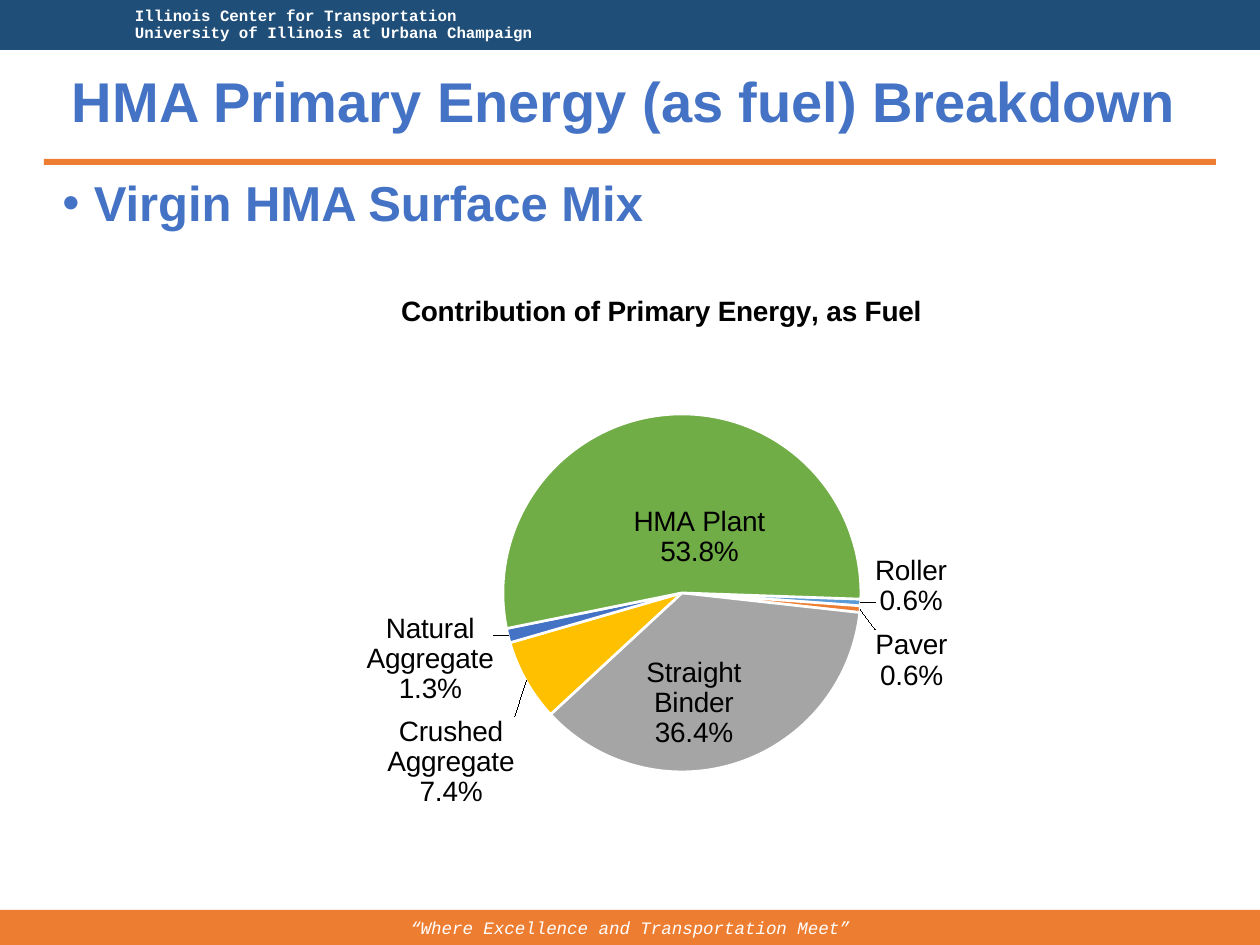
from pptx import Presentation
from pptx.chart.data import CategoryChartData
from pptx.dml.color import RGBColor
from pptx.enum.chart import XL_CHART_TYPE, XL_LABEL_POSITION
from pptx.enum.shapes import MSO_SHAPE
from pptx.enum.text import MSO_ANCHOR, MSO_AUTO_SIZE, PP_ALIGN
from pptx.oxml import parse_xml
from pptx.oxml.ns import nsdecls
from pptx.util import Pt

RECT = MSO_SHAPE.RECTANGLE
PIE = XL_CHART_TYPE.PIE
CENTER, OUTSIDE = XL_LABEL_POSITION.CENTER, XL_LABEL_POSITION.OUTSIDE_END
MIDDLE, TOP = MSO_ANCHOR.MIDDLE, MSO_ANCHOR.TOP
LEFT, MID = PP_ALIGN.LEFT, PP_ALIGN.CENTER

WHITE = RGBColor(0xFF, 0xFF, 0xFF)
BLACK = RGBColor(0, 0, 0)
NAVY = RGBColor(0x1F, 0x4E, 0x79)
ORANGE = RGBColor(0xED, 0x7D, 0x31)
BLUE = RGBColor(0x44, 0x72, 0xC4)
SKY = RGBColor(0x5B, 0x9B, 0xD5)
GRAY = RGBColor(0xA5, 0xA5, 0xA5)
GOLD = RGBColor(0xFF, 0xC0, 0x00)
GREEN = RGBColor(0x70, 0xAD, 0x47)

SCALE = 914400 / 126
CHART_W, CHART_H = 935, 621


def px(*lengths):
    return [round(n * SCALE) for n in lengths]


def write(tf, lines, fmt, align=LEFT, spacing=0.9):
    tf.word_wrap = True
    tf.auto_size = MSO_AUTO_SIZE.NONE
    for i, line in enumerate(lines):
        p = tf.paragraphs[0] if i == 0 else tf.add_paragraph()
        p.alignment = align
        p.line_spacing = spacing
        r = p.add_run()
        r.text = line
        r.font.color.rgb = fmt["color"]
        for key in ("name", "size", "bold", "italic"):
            setattr(r.font, key, fmt.get(key))


prs = Presentation()
prs.slide_width, prs.slide_height = px(1260, 945)
s = prs.slides.add_slide(prs.slide_layouts[5])

bars = []
for box, color in (
    ((0, 910, 1260, 36), ORANGE),
    ((0, 0, 1260, 50), NAVY),
    ((44, 159, 1172, 6), ORANGE),
):
    sp = s.shapes.add_shape(RECT, *px(*box))
    sp.shadow.inherit = False
    sp.fill.solid()
    sp.fill.fore_color.rgb = color
    sp.line.fill.background()
    sp.text_frame.vertical_anchor = MIDDLE
    bars.append(sp)
footer, header, rule = bars

write(footer.text_frame, ["“Where Excellence and Transportation Meet”"],
      {"name": "Courier New", "size": Pt(10), "italic": True, "color": WHITE}, MID, 1.0)
header.text_frame.margin_left = px(135)[0]
write(header.text_frame,
      ["Illinois Center for Transportation", "University of Illinois at Urbana Champaign"],
      {"name": "Courier New", "size": Pt(9), "bold": True, "color": WHITE})

title = s.shapes.title
title.left, title.top, title.width, title.height = px(50, 54, 1148, 101)
title.text_frame.vertical_anchor = MIDDLE
write(title.text_frame, ["HMA Primary Energy (as fuel) Breakdown"],
      {"name": "Arial", "size": Pt(32), "bold": True, "color": BLUE}, MID)

body = s.shapes.add_textbox(*px(50, 173, 1148, 71))
body.text_frame.vertical_anchor = TOP
write(body.text_frame, ["Virgin HMA Surface Mix"],
      {"name": "Arial", "size": Pt(28), "bold": True, "color": BLUE})
pPr = body.text_frame.paragraphs[0]._p.get_or_add_pPr()
pPr.set("marL", "228600")
pPr.set("indent", "-228600")
pPr.append(parse_xml(f'<a:buFont {nsdecls("a")} typeface="Arial"/>'))
pPr.append(parse_xml(f'<a:buChar {nsdecls("a")} char="•"/>'))

slices = [
    ("Roller", 0.6, SKY, OUTSIDE, 7, -17),
    ("Paver", 0.6, ORANGE, OUTSIDE, 8, 20),
    ("Straight Binder", 36.4, GRAY, CENTER, -16, 25),
    ("Crushed Aggregate", 7.4, GOLD, OUTSIDE, -5, 32),
    ("Natural Aggregate", 1.3, BLUE, OUTSIDE, -7, -24),
    ("HMA Plant", 53.8, GREEN, CENTER, 25, 33),
]
data = CategoryChartData()
data.categories = [row[0] for row in slices]
data.add_series("Series 1", [row[1] for row in slices])
chart = s.shapes.add_chart(PIE, *px(189, 262, CHART_W, CHART_H), data).chart
chart.has_legend = False
chart.font.name = "Arial"
chart.font.size = Pt(10)
chart.font.color.rgb = BLACK
chart.has_title = True
write(chart.chart_title.text_frame, ["Contribution of Primary Energy, as Fuel"],
      {"name": "Arial", "size": Pt(16), "bold": True, "color": BLACK}, MID, 1.0)

plot = chart.plots[0]
plot.vary_by_categories = True
series = plot.series[0]
labels = series.data_labels
labels.show_category_name = True
labels.show_value = True
labels.number_format = '0.0"%"'
labels.number_format_is_linked = False
labels.font.size = Pt(16)

for i, (name, value, color, position, dx, dy) in enumerate(slices):
    point = series.points[i]
    point.format.fill.solid()
    point.format.fill.fore_color.rgb = color
    point.format.line.color.rgb = WHITE
    point.format.line.width = Pt(1.5)
    label = point.data_label
    label.font.name = "Arial"
    label.font.size = Pt(16)
    label.font.color.rgb = BLACK
    label.position = position
    dLbl = chart._chartSpace.xpath(".//c:dLbl")[i]
    dLbl.xpath("c:showCatName")[0].set("val", "1")
    dLbl.insert(1, parse_xml(
        f'<c:layout {nsdecls("c")}><c:manualLayout><c:x val="{dx / CHART_W}"/>'
        f'<c:y val="{dy / CHART_H}"/></c:manualLayout></c:layout>'))
    dLbl.insert(2, parse_xml(
        f'<c:numFmt {nsdecls("c")} formatCode="0.0&quot;%&quot;" sourceLinked="0"/>'))
    dLbl.append(parse_xml(f'<c:separator {nsdecls("c")}>\n</c:separator>'))

pie = chart._chartSpace.xpath(".//c:pieChart")[0]
for old in pie.xpath("c:firstSliceAng"):
    pie.remove(old)
pie.append(parse_xml(f'<c:firstSliceAng {nsdecls("c")} val="92"/>'))

area = chart._chartSpace.xpath(".//c:plotArea")[0]
heading = chart._chartSpace.xpath(".//c:chart/c:title")[0]
for parent, at, frame in (
    (area, 0, {"layoutTarget": "inner", "xMode": "edge", "yMode": "edge",
               "x": 314 / CHART_W, "y": 152 / CHART_H,
               "w": 358 / CHART_W, "h": 358 / CHART_H}),
    (heading, 1, {"xMode": "edge", "yMode": "edge",
                  "x": 207 / CHART_W, "y": 26 / CHART_H}),
):
    for old in parent.xpath("c:layout"):
        parent.remove(old)
    parts = "".join(f'<c:{key} val="{val}"/>' for key, val in frame.items())
    parent.insert(at, parse_xml(
        f'<c:layout {nsdecls("c")}><c:manualLayout>{parts}</c:manualLayout></c:layout>'))

prs.save("out.pptx")
